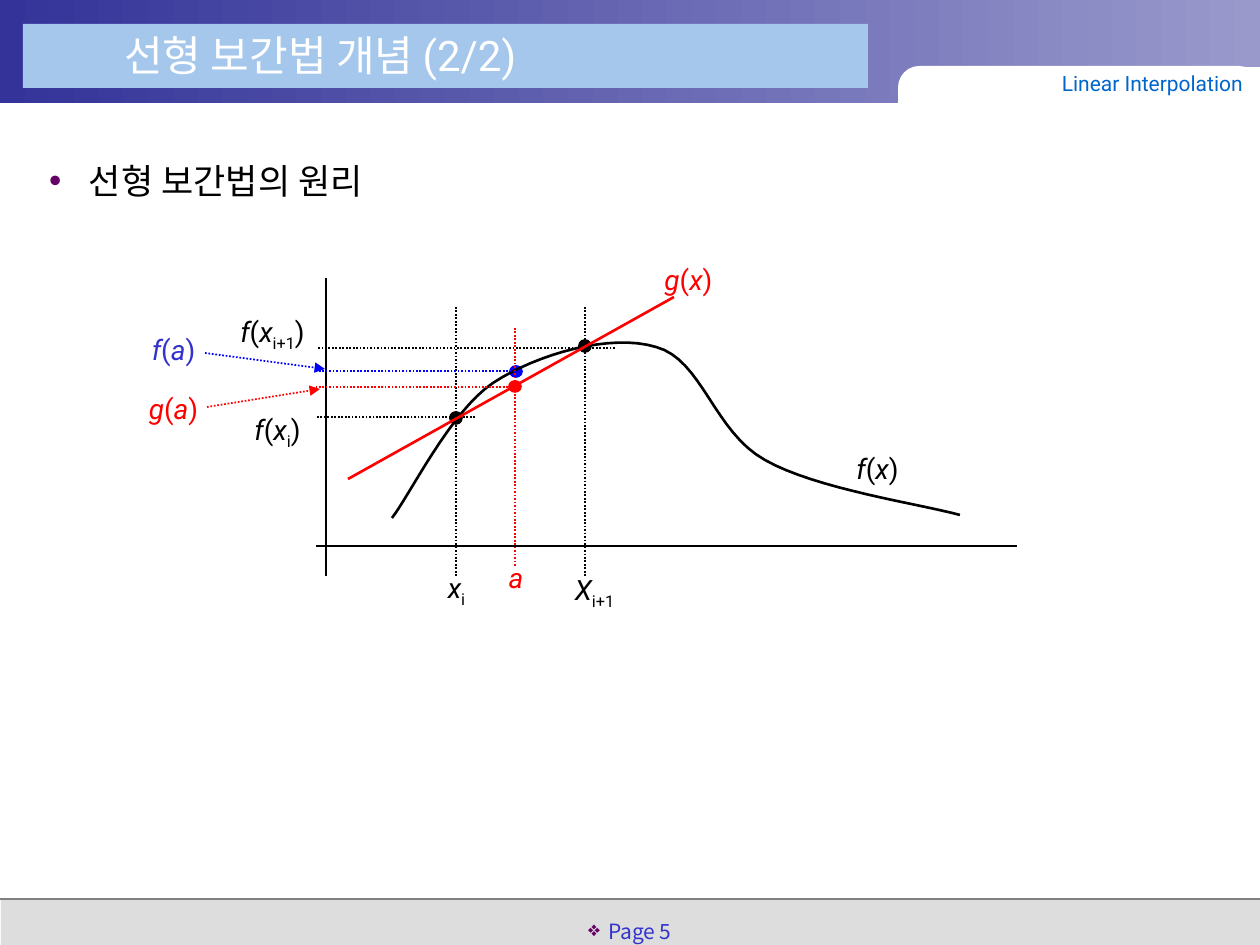
import pptx
import pptx.dml.color
import pptx.enum.dml
import pptx.enum.shapes
import pptx.enum.text
import pptx.oxml
import pptx.oxml.ns
import pptx.util

PX = 7257.14  # EMU per px, 126 px to the inch
NS = pptx.oxml.ns.nsdecls("a")
SHAPE = pptx.enum.shapes.MSO_SHAPE
ALIGN = pptx.enum.text.PP_ALIGN
ANCHOR = pptx.enum.text.MSO_ANCHOR
color = pptx.dml.color.RGBColor.from_string


def emu(*lengths):
    return [round(length * PX) for length in lengths]


def write(shape, parts, size, hex_color, align, margins, font="Roboto",
          anchor=ANCHOR.TOP, wrap=True, bullet=None):
    """Fill a shape with one paragraph; "_" starts a subscript part."""
    frame = shape.text_frame
    sides = ("margin_left", "margin_top", "margin_right", "margin_bottom")
    frame_format = dict(zip(sides, emu(*margins)), word_wrap=wrap, vertical_anchor=anchor,
                        auto_size=pptx.enum.text.MSO_AUTO_SIZE.NONE)
    for name, value in frame_format.items():
        setattr(frame, name, value)
    paragraph = frame.paragraphs[0]
    paragraph.alignment = align
    if bullet:
        properties = paragraph._p.get_or_add_pPr()
        properties.append(pptx.oxml.parse_xml(
            f'<a:buClr {NS}><a:srgbClr val="660066"/></a:buClr>'))
        properties.append(pptx.oxml.parse_xml(f'<a:buChar {NS} char="{bullet}"/>'))
    for part in parts:
        run = paragraph.add_run()
        run.text = part.lstrip("_")
        font_format = {"size": pptx.util.Pt(size), "name": font,
                       "italic": len(parts[0]) == 1 and part.isalpha()}
        for name, value in font_format.items():
            setattr(run.font, name, value)
        run.font.color.rgb = color(hex_color)
        properties = run._r.get_or_add_rPr()
        properties.append(pptx.oxml.parse_xml(
            f'<a:ea {NS} typeface="Noto Sans CJK KR"/>'))
        if part.startswith("_"):
            properties.set("baseline", "-25000")
    return paragraph


presentation = pptx.Presentation()
presentation.slide_width, presentation.slide_height = emu(1260, 945)
slide = presentation.slides.add_slide(presentation.slide_layouts[1])
shapes = slide.shapes
title, body = shapes.title, slide.placeholders[1]

# Header and footer bands, then the points on the curves
filled_shapes = [
    (SHAPE.RECTANGLE, (1, 900, 1259, 49), "DDDDDD", False),
    (SHAPE.RECTANGLE, (0, 0, 1260, 103), None, False),
    (SHAPE.ROUNDED_RECTANGLE, (898, 66, 362, 74), "FFFFFF", False),
    (SHAPE.RECTANGLE, (1147, 67, 113, 30), "FFFFFF", False),
    (SHAPE.RECTANGLE, (23, 24, 845, 64), "A6C7EC", False),
    (SHAPE.OVAL, (450, 412, 12, 12), "000000", True),
    (SHAPE.OVAL, (579, 340, 12, 12), "000000", True),
    (SHAPE.OVAL, (510, 366, 12, 11), "0000FF", True),
    (SHAPE.OVAL, (509, 381, 12, 11), "FF0000", True),
]
for kind, box, fill, outlined in filled_shapes:
    shape = shapes.add_shape(kind, *emu(*box))
    shape.shadow.inherit = False
    if fill:
        shape.fill.solid()
        shape.fill.fore_color.rgb = color(fill)
    else:
        shape.fill.gradient()
        shape.fill.gradient_angle = 0
        for stop, shade in zip(shape.fill.gradient_stops, ("333399", "9999CC")):
            stop.color.rgb = color(shade)
    if kind == SHAPE.ROUNDED_RECTANGLE:
        shape.adjustments[0] = 0.29
    if outlined:
        shape.line.color.rgb = color(fill)
        shape.line.width = pptx.util.Pt(1)
    else:
        shape.line.fill.background()

# Curve f(x), traced along its Bezier segments
start = (392, 518)
segments = [
    ((410, 495), (450, 412), (493, 383)),
    ((537, 354), (611, 333), (656, 347)),
    ((702, 359), (714, 432), (765, 460)),
    ((816, 489), (920, 504), (960, 515)),
]
STEPS = 16
points = [start]
for segment in segments:
    controls = (points[-1], *segment)
    for step in range(1, STEPS + 1):
        t = step / STEPS
        weights = ((1 - t) ** 3, 3 * t * (1 - t) ** 2, 3 * t ** 2 * (1 - t), t ** 3)
        points.append(tuple(sum(weight * control[axis] for weight, control
                                in zip(weights, controls)) for axis in (0, 1)))
builder = shapes.build_freeform(*emu(*start), scale=1.0)
builder.add_line_segments([emu(*point) for point in points[1:]], close=False)
curve = builder.convert_to_shape()
curve.shadow.inherit = False
curve.fill.background()
curve.line.color.rgb = color("000000")
curve.line.width = pptx.util.Pt(1.5)

# Axes, guides, the line g(x) and the pointers
lines = [
    ((0, 899, 1260, 899), "808080", 1, ""),
    ((1017, 546, 316, 546), "000000", 1, ""),
    ((326, 278, 326, 576), "000000", 1, ""),
    ((456, 307, 456, 576), "000000", 1, "dot"),
    ((585, 307, 585, 576), "000000", 1, "dot"),
    ((475, 417, 316, 417), "000000", 1, "dot"),
    ((615, 348, 318, 348), "000000", 1, "dot"),
    ((348, 479, 674, 297), "FF0000", 1.5, ""),
    ((515, 371, 316, 371), "0000FF", 1, "dot"),
    ((205, 353, 325, 369), "0000FF", 1, "dot arrow"),
    ((515, 328, 515, 566), "FF0000", 1, "dot"),
    ((515, 387, 316, 387), "FF0000", 1, "dot"),
    ((207, 407, 320, 389), "FF0000", 1, "dot arrow"),
]
for ends, stroke, width, style in lines:
    connector = shapes.add_connector(pptx.enum.shapes.MSO_CONNECTOR.STRAIGHT, *emu(*ends))
    connector.line.color.rgb = color(stroke)
    connector.line.width = pptx.util.Pt(width)
    if "dot" in style:
        connector.line.dash_style = pptx.enum.dml.MSO_LINE.ROUND_DOT
    if "arrow" in style:
        connector.line._get_or_add_ln().append(
            pptx.oxml.parse_xml(f'<a:tailEnd {NS} type="triangle"/>'))
    connector._element.spPr.append(pptx.oxml.parse_xml(f'<a:effectLst {NS}/>'))

# Labels of the diagram, parts separated by "|"
labels = [
    ("x|_i", (432, 566, 49, 44), "000000"),
    ("X|_i+1", (558, 568, 73, 44), "000000"),
    ("f|(|x|_i|)", (238, 407, 79, 44), "000000"),
    ("f|(|x|_i+1|)", (228, 310, 89, 44), "000000"),
    ("f|(|x|)", (833, 447, 89, 44), "000000"),
    ("g|(|x|)", (644, 258, 89, 44), "FF0000"),
    ("f|(|a|)", (138, 328, 71, 44), "3333CC"),
    ("a", (502, 556, 28, 44), "FF0000"),
    ("g|(|a|)", (138, 387, 71, 44), "FF0000"),
]
for label, box, hex_color in labels:
    write(shapes.add_textbox(*emu(*box)), label.split("|"), 16, hex_color,
          ALIGN.CENTER, (5, 5, 5, 5), wrap=False)

# Section name and page number
write(shapes.add_textbox(*emu(1051, 66, 197, 35)), ["Linear Interpolation"], 12, "0066CC",
      ALIGN.RIGHT, (5, 5, 5, 5), anchor=ANCHOR.MIDDLE, wrap=False)
page = write(shapes.add_textbox(*emu(573, 907, 114, 35)), ["Page 5"], 12, "3333CC",
             ALIGN.CENTER, (12, 14, 12, 0), font="Noto Sans CJK KR", bullet="❖")
page.line_spacing = 0.9
page._p.pPr.set("marL", str(emu(20)[0]))
page._p.pPr.set("indent", str(emu(-20)[0]))

# Title and body, brought in front of the bands
for placeholder, box in ((title, (112, 23, 626, 63)), (body, (44, 146, 1181, 60))):
    placeholder.left, placeholder.top, placeholder.width, placeholder.height = emu(*box)
    shapes._spTree.append(placeholder._element)
write(title, ["선형 보간법 개념 (2/2)"], 24, "FFFFFF", ALIGN.LEFT, (12, 6, 12, 6))
principle = write(body, ["선형 보간법의 원리"], 20, "000000", ALIGN.LEFT, (5, 5, 5, 5), bullet="•")
principle.line_spacing = 1.2
principle.space_before = pptx.util.Pt(0)
principle._p.pPr.set("marL", str(emu(40)[0]))
principle._p.pPr.set("indent", str(emu(-40)[0]))

presentation.save("out.pptx")
